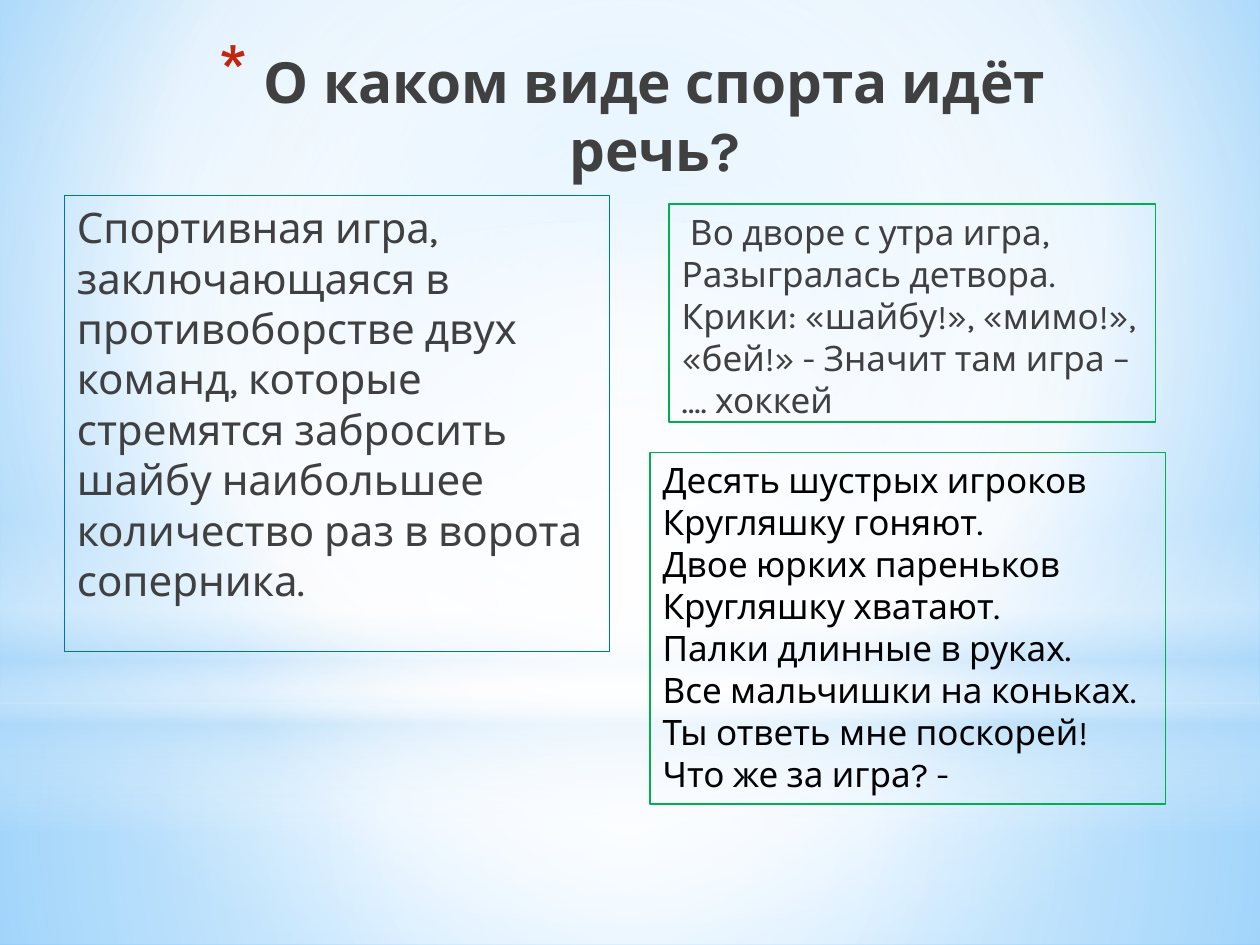
import pptx
import pptx.dml.color
import pptx.enum.shapes
import pptx.enum.text
import pptx.oxml
import pptx.oxml.ns
import pptx.util

Inches = pptx.util.Inches
SHAPES = pptx.enum.shapes.MSO_SHAPE
ALIGN = pptx.enum.text.PP_ALIGN
ANCHOR = pptx.enum.text.MSO_ANCHOR

THEME = {
    "font": "Karla",
    "title_size": 32.4, "definition_size": 24, "riddle_size": 20,
    "text": "404040", "black": "000000", "bullet": "C3260C",
    "blue": "0070C0", "green": "00B050",
    "white": "FFFFFF", "sky": "B4DCFA", "pale": "9ED5FF", "deep": "5BB9FF",
    "line_width": 0.75,
}

TITLE = "О каком виде спорта идёт речь?"
DEFINITION = [
    "Спортивная игра, заключающаяся в противоборстве двух команд, которые "
    "стремятся забросить шайбу наибольшее количество раз в ворота соперника.",
]
YARD_RIDDLE = [
    " Во дворе с утра игра, Разыгралась детвора. Крики: «шайбу!», «мимо!», "
    "«бей!» - Значит там игра – …. хоккей",
]
PLAYERS_RIDDLE = [
    "Десять шустрых игроков",
    "Кругляшку гоняют.",
    "Двое юрких пареньков",
    "Кругляшку хватают.",
    "Палки длинные в руках.",
    "Все мальчишки на коньках.",
    "Ты ответь мне поскорей!",
    "Что же за игра? -",
]

TITLE_BOX = (1.46, 0.29, 7.12, 1.25)
# placeholder index (None: text box), box, lines, size, text colour, outline
PANELS = [
    (1, (0.51, 1.55, 4.33, 3.62), DEFINITION, "definition_size", "text", "blue"),
    (2, (5.31, 1.62, 3.86, 1.73), YARD_RIDDLE, "riddle_size", "text", "green"),
    (None, (5.16, 3.59, 4.09, 2.79), PLAYERS_RIDDLE, "riddle_size", "black", "green"),
]

# gradient stops: position %, colour, opacity %
BACKGROUND = [(0, "pale", 100), (60, "white", 100), (100, "deep", 100)]
BACKGROUND_FOCUS = (20, 10, 20, 60)
CENTRE = (50, 50, 50, 50)
# shape, box, stops, focus (None: runs from top to bottom)
BACKDROP = [
    (SHAPES.RECTANGLE, (0, 5.58, 10, 1.92),
     [(0, "white", 91), (37, "white", 76), (100, "sky", 79)], CENTRE),
    (SHAPES.RECTANGLE, (0, 0, 10, 5.58),
     [(0, "white", 89), (48, "white", 62), (100, "sky", 79)], CENTRE),
    (SHAPES.RECTANGLE, (0, 4.12, 10, 2.5),
     [(0, "white", 0), (29, "white", 30), (45, "sky", 40),
      (55, "white", 26), (65, "sky", 60), (100, "white", 0)], None),
    (SHAPES.OVAL, (0, 1.75, 10, 5.58),
     [(0, "white", 100), (56, "white", 0)], CENTRE),
]


def rgb(name):
    return pptx.dml.color.RGBColor.from_string(THEME[name])


def set_attributes(target, values):
    for name, value in values.items():
        setattr(target, name, value)


def place(shape, box):
    names = ("left", "top", "width", "height")
    set_attributes(shape, dict(zip(names, map(Inches, box))))


def apply_gradient(fill, element, stops, focus):
    """Give the fill inside element its own stops, round a focus or downwards."""
    fill.gradient()
    old = element.find(".//" + pptx.oxml.ns.qn("a:gradFill"))
    stop_xml = "".join(
        f'<a:gs pos="{position * 1000}"><a:srgbClr val="{THEME[colour]}">'
        f'<a:alpha val="{opacity * 1000}"/></a:srgbClr></a:gs>'
        for position, colour, opacity in stops)
    if focus:
        sides = " ".join(f'{side}="{value * 1000}"' for side, value in zip("ltrb", focus))
        direction = f'<a:path path="circle"><a:fillToRect {sides}/></a:path>'
    else:
        direction = '<a:lin ang="5400000" scaled="0"/>'
    new = pptx.oxml.parse_xml(
        f'<a:gradFill {pptx.oxml.ns.nsdecls("a")} rotWithShape="1">'
        f'<a:gsLst>{stop_xml}</a:gsLst>{direction}</a:gradFill>')
    old.getparent().replace(old, new)


def set_bullet(paragraph, indent, *tags):
    properties = paragraph._p.get_or_add_pPr()
    properties.set("marL", str(Inches(indent)))
    properties.set("indent", str(-Inches(indent)))
    for tag in tags:
        name, _, rest = tag.partition(">")
        properties.append(pptx.oxml.parse_xml(
            f'<a:{name} {pptx.oxml.ns.nsdecls("a")}>{rest}</a:{name.split()[0]}>'))


def format_font(paragraph, size, colour, bold=False):
    set_attributes(paragraph.font, {
        "name": THEME["font"], "size": pptx.util.Pt(THEME[size]), "bold": bold})
    paragraph.font.color.rgb = rgb(colour)


def prepare_frame(shape, anchor):
    set_attributes(shape.text_frame, {
        "word_wrap": True, "vertical_anchor": anchor,
        "auto_size": pptx.enum.text.MSO_AUTO_SIZE.NONE})


def add_backdrop(slide):
    apply_gradient(slide.background.fill, slide.element, BACKGROUND, BACKGROUND_FOCUS)
    for order, (kind, box, stops, focus) in enumerate(BACKDROP):
        shape = slide.shapes.add_shape(kind, *map(Inches, box))
        shape.shadow.inherit = False
        shape.line.fill.background()
        apply_gradient(shape.fill, shape.element, stops, focus)
        slide.shapes._spTree.insert(2 + order, shape.element)


def add_title(slide):
    title = slide.shapes.title
    place(title, TITLE_BOX)
    prepare_frame(title, ANCHOR.MIDDLE)
    title.text_frame.text = TITLE
    paragraph = title.text_frame.paragraphs[0]
    paragraph.alignment = ALIGN.CENTER
    set_bullet(paragraph, 0.35,
               f'buClr><a:srgbClr val="{THEME["bullet"]}"/>',
               'buSzPct val="128000">', 'buChar char="*">')
    format_font(paragraph, "title_size", "text", bold=True)


def add_panel(slide, index, box, lines, size, colour, outline):
    if index is None:
        panel = slide.shapes.add_textbox(*map(Inches, box))
    else:
        panel = slide.placeholders[index]
        place(panel, box)
    prepare_frame(panel, ANCHOR.TOP)
    panel.line.color.rgb = rgb(outline)
    panel.line.width = pptx.util.Pt(THEME["line_width"])
    panel.text_frame.text = "\n".join(lines)
    for paragraph in panel.text_frame.paragraphs:
        set_attributes(paragraph, {"alignment": ALIGN.LEFT, "space_before": 0})
        set_bullet(paragraph, 0, "buNone>")
        format_font(paragraph, size, colour)


def main():
    presentation = pptx.Presentation()
    presentation.slide_width, presentation.slide_height = Inches(10), Inches(7.5)
    slide = presentation.slides.add_slide(
        presentation.slide_layouts.get_by_name("Two Content"))
    add_backdrop(slide)
    add_title(slide)
    for panel in PANELS:
        add_panel(slide, *panel)
    presentation.save("out.pptx")


if __name__ == "__main__":
    main()
